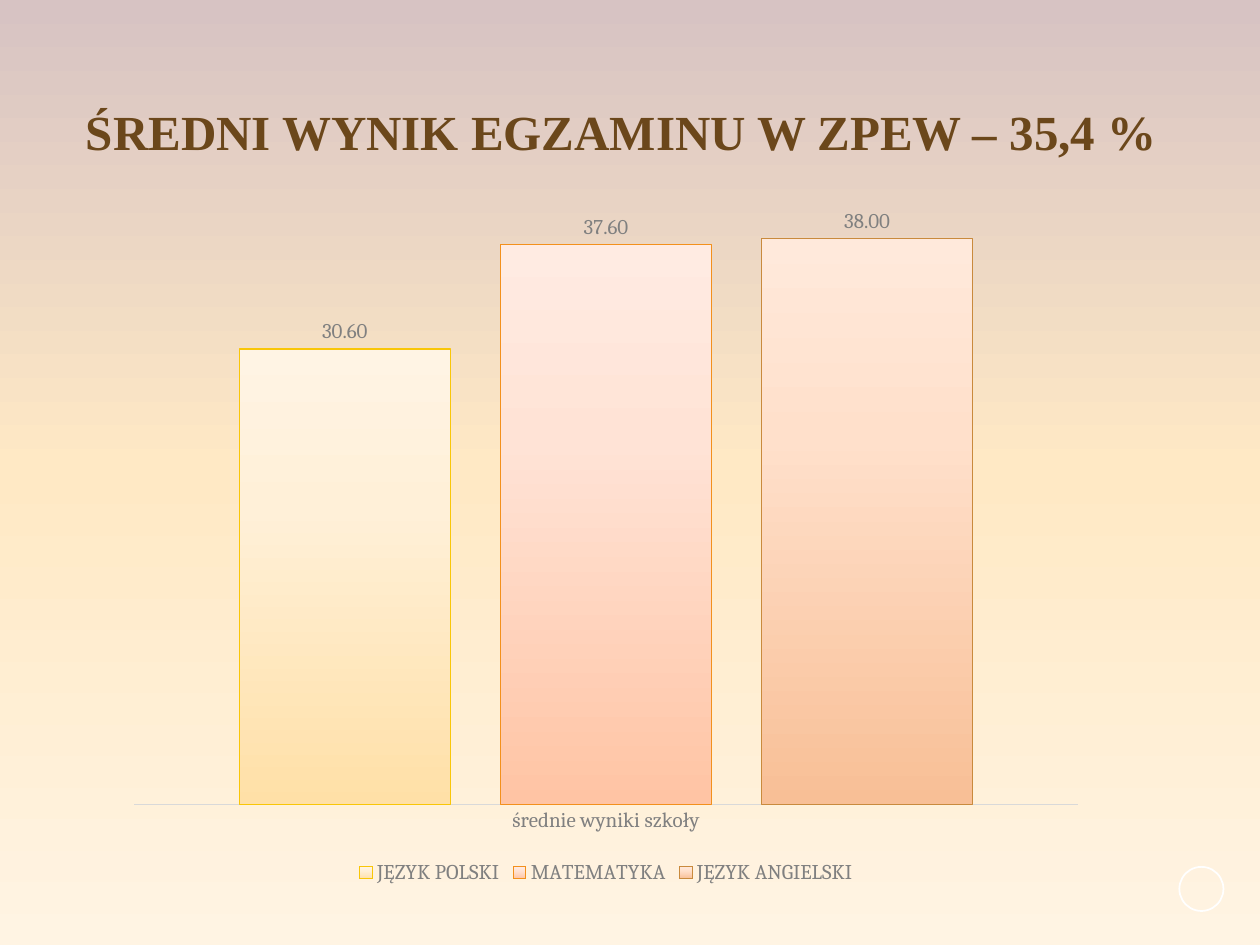
"""Build the slide with the average exam results chart."""
from lxml.etree import SubElement
from pptx import Presentation
from pptx.chart.data import CategoryChartData
from pptx.dml.color import RGBColor
from pptx.enum.chart import XL_CHART_TYPE, XL_LABEL_POSITION, XL_LEGEND_POSITION, XL_TICK_LABEL_POSITION, XL_TICK_MARK
from pptx.enum.shapes import MSO_SHAPE
from pptx.enum.text import MSO_ANCHOR, PP_ALIGN
from pptx.oxml.ns import qn
from pptx.util import Inches, Pt

TITLE = "ŚREDNI WYNIK EGZAMINU W ZPEW – 35,4 %"
CATEGORIES = ["średnie wyniki szkoły"]
SERIES = [
    ("JĘZYK POLSKI", 30.6, "polish"),
    ("MATEMATYKA", 37.6, "maths"),
    ("JĘZYK ANGIELSKI", 38, "english"),
]
COLORS = {
    "title": "6B471B",
    "label": "808080",
    "axis": "D9D9D9",
    "ring": "FFFFFF",
    "polish": "F9C608",
    "maths": "F3901C",
    "english": "C98A3D",
}
GRADIENTS = {
    "background": [(0, "D7C3C3"), (50, "FFE9C5"), (100, "FFF4E3")],
    "polish": [(0, "FFE0A7"), (65, "FFF0D8"), (100, "FFF4E4")],
    "maths": [(0, "FFC4A4"), (65, "FFE3D6"), (100, "FFEBE2")],
    "english": [(0, "F8BF96"), (65, "FFE0CB"), (100, "FFE9DB")],
}
TITLE_FONT = {"name": "Times New Roman", "size": Pt(28), "bold": True}
LABEL_FONT = {"name": "Cambria", "size": Pt(12), "bold": False}


def rgb(key):
    return RGBColor.from_string(COLORS[key])


def set_font(font, values, color):
    for name, value in values.items():
        setattr(font, name, value)
    font.color.rgb = rgb(color)


def set_line(line, color, width):
    line.color.rgb = rgb(color)
    line.width = Pt(width)


def set_gradient(fill, element, key, angle):
    fill.gradient()
    fill.gradient_angle = angle
    stops = element.find(".//" + qn("a:gsLst"))
    for stop in list(stops):
        stops.remove(stop)
    for pos, color in GRADIENTS[key]:
        stop = SubElement(stops, qn("a:gs"), pos=str(pos * 1000))
        SubElement(stop, qn("a:srgbClr"), val=color)


def add_title(s):
    tf = s.shapes.add_textbox(Inches(0.43), Inches(0.6), Inches(9), Inches(0.94)).text_frame
    tf.word_wrap = True
    tf.vertical_anchor = MSO_ANCHOR.MIDDLE
    p = tf.paragraphs[0]
    p.alignment = PP_ALIGN.CENTER
    p.line_spacing = 0.9
    r = p.add_run()
    r.text = TITLE
    set_font(r.font, TITLE_FONT, "title")


def add_ring(s):
    sp = s.shapes.add_shape(MSO_SHAPE.OVAL, Inches(9.36), Inches(6.88), Inches(0.35), Inches(0.35))
    sp.shadow.inherit = False
    sp.fill.background()
    set_line(sp.line, "ring", 1)


def add_results_chart(s):
    data = CategoryChartData(number_format="0.00")
    data.categories = CATEGORIES
    for name, value, _ in SERIES:
        data.add_series(name, [value])
    chart = s.shapes.add_chart(
        XL_CHART_TYPE.COLUMN_CLUSTERED, Inches(0.91), Inches(1.55), Inches(7.8), Inches(5.51), data
    ).chart
    chart.has_title = False
    set_font(chart.font, LABEL_FONT, "label")

    chart.has_legend = True
    chart.legend.position = XL_LEGEND_POSITION.BOTTOM
    chart.legend.include_in_layout = False
    set_font(chart.legend.font, LABEL_FONT, "label")

    axis = chart.category_axis
    axis.major_tick_mark = XL_TICK_MARK.NONE
    axis.tick_label_position = XL_TICK_LABEL_POSITION.NEXT_TO_AXIS
    set_font(axis.tick_labels.font, LABEL_FONT, "label")
    set_line(axis.format.line, "axis", 0.75)

    values = chart.value_axis
    values.visible = False
    values.has_major_gridlines = False
    values.minimum_scale, values.maximum_scale = 0, 40
    values.tick_labels.number_format = "0.00"
    values.tick_labels.number_format_is_linked = False

    plot = chart.plots[0]
    plot.vary_by_categories = False
    plot.gap_width, plot.overlap = 100, -24
    for ser, (_, _, key) in zip(plot.series, SERIES):
        set_gradient(ser.format.fill, ser._element, key, 90)
        set_line(ser.format.line, key, 0.75)
        labels = ser.data_labels
        labels.show_value = True
        labels.position = XL_LABEL_POSITION.OUTSIDE_END
        labels.number_format = "0.00"
        labels.number_format_is_linked = False
        set_font(labels.font, LABEL_FONT, "label")


def main():
    prs = Presentation()
    prs.slide_width, prs.slide_height = Inches(10), Inches(7.5)
    s = prs.slides.add_slide(prs.slide_layouts[6])
    set_gradient(s.background.fill, s.element, "background", 270)
    add_ring(s)
    add_title(s)
    add_results_chart(s)
    prs.save("out.pptx")


if __name__ == "__main__":
    main()
